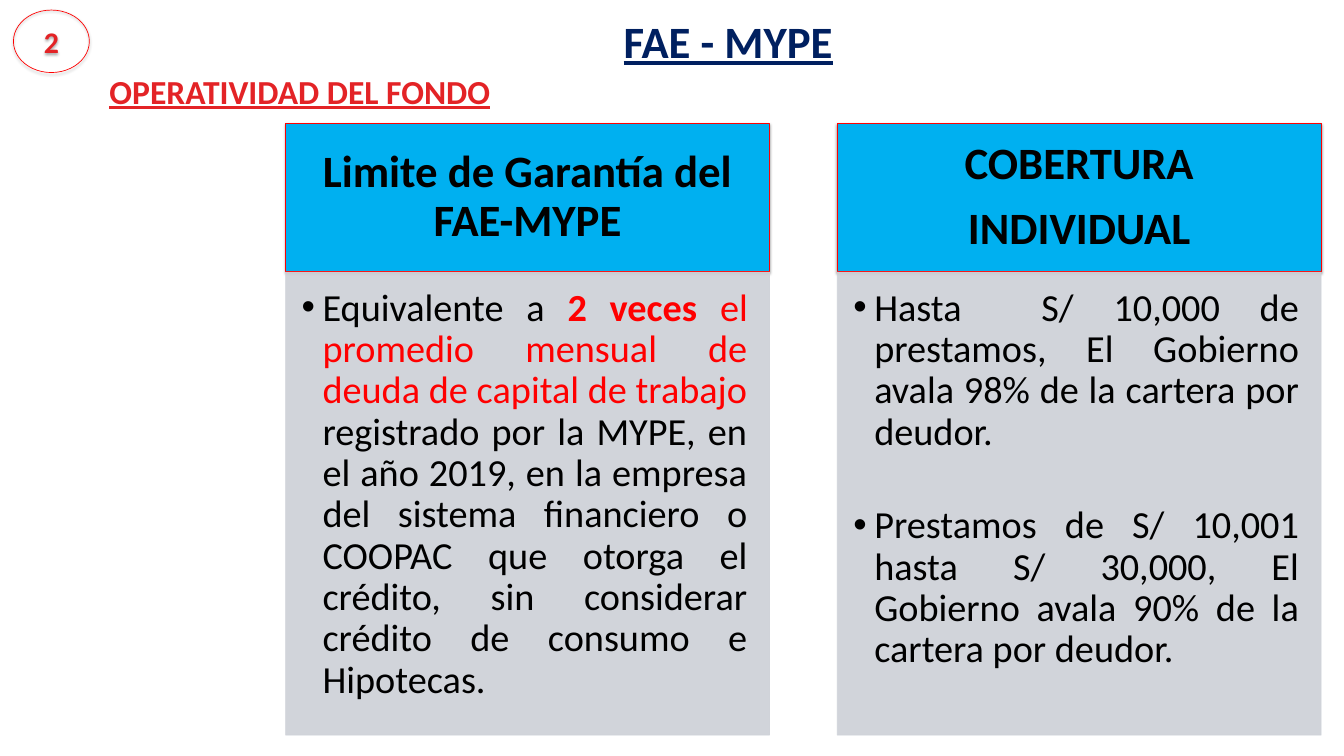
from lxml import etree
from pptx import Presentation
from pptx.dml.color import RGBColor
from pptx.enum.shapes import MSO_SHAPE
from pptx.enum.text import MSO_ANCHOR, MSO_AUTO_SIZE, PP_ALIGN
from pptx.oxml.ns import qn
from pptx.util import Inches, Pt

OVAL = MSO_SHAPE.OVAL
TOP, MIDDLE = MSO_ANCHOR.TOP, MSO_ANCHOR.MIDDLE
LEFT, CENTER, JUSTIFY = PP_ALIGN.LEFT, PP_ALIGN.CENTER, PP_ALIGN.JUSTIFY
NO_FIT = MSO_AUTO_SIZE.NONE
COMPARISON = 4

COLORS = {"navy": "002060", "crimson": "E32326", "red": "FF0000",
          "blue": "00B0F0", "gray": "CDD0D7", "black": "000000"}

COLUMNS = [
    (["Limite de Garantía del FAE-MYPE"],
     [[("Equivalente a ", "black", False),
       ("2 veces ", "red", True),
       ("el promedio mensual de deuda de capital de trabajo ", "red", False),
       ("registrado por la MYPE, en el año 2019, en la empresa del sistema "
        "financiero o COOPAC que otorga el crédito, sin considerar crédito "
        "de consumo e Hipotecas. ", "black", False)]]),
    (["COBERTURA", "INDIVIDUAL"],
     [[("Hasta  S/ 10,000 de prestamos, El Gobierno avala 98% de la cartera "
        "por deudor.", "black", False)],
      [("Prestamos de S/ 10,001 hasta S/ 30,000, El Gobierno avala 90% de la "
        "cartera por deudor.", "black", False)]]),
]


class Deck:
    """Holds the style and the current slide."""

    font = "Calibri"

    def __init__(self, prs):
        self.s = prs.slides.add_slide(prs.slide_layouts[COMPARISON])

    def color(self, name):
        return RGBColor.from_string(COLORS[name])

    def place(self, sp, box):
        sp.left, sp.top, sp.width, sp.height = (Inches(v) for v in box)

    def frame(self, sp, anchor, insets=(0.1, 0.05, 0.1, 0.05)):
        tf = sp.text_frame
        tf.word_wrap = True
        tf.auto_size = NO_FIT
        tf.vertical_anchor = anchor
        tf.margin_left, tf.margin_top, tf.margin_right, tf.margin_bottom = (
            Inches(v) for v in insets)
        return tf

    def add_text(self, tf, paragraphs, size, align, spacing=1.0, gap=0,
                 underline=False, bullet=False):
        for i, runs in enumerate(paragraphs):
            p = tf.add_paragraph() if i else tf.paragraphs[0]
            if bullet:
                self.bullet(p)
            p.alignment = align
            p.line_spacing = spacing
            p.space_before = Pt(gap if i else 0)
            p.space_after = Pt(0)
            for text, color, bold in runs:
                r = p.add_run()
                r.text = text
                r.font.name = self.font
                r.font.size = Pt(size)
                r.font.bold = bold
                r.font.underline = underline
                r.font.color.rgb = self.color(color)

    def bullet(self, p):
        pPr = p._p.get_or_add_pPr()
        pPr.set("marL", str(Inches(0.31)))
        pPr.set("indent", str(-Inches(0.31)))
        etree.SubElement(pPr, qn("a:buFont"), typeface="Arial")
        etree.SubElement(pPr, qn("a:buChar"), char="•")

    def outline(self, sp, color, width):
        sp.line.color.rgb = self.color(color)
        sp.line.width = Pt(width)

    def fill(self, sp, color):
        sp.fill.solid()
        sp.fill.fore_color.rgb = self.color(color)

    def shadow(self, sp, distance, alpha):
        sp.shadow.inherit = False
        effects = sp._element.spPr.find(qn("a:effectLst"))
        outer = etree.SubElement(effects, qn("a:outerShdw"), blurRad=str(Pt(3.1)),
                                 dist=str(Pt(distance)), dir="5400000", rotWithShape="0")
        rgb = etree.SubElement(outer, qn("a:srgbClr"), val=COLORS["black"])
        etree.SubElement(rgb, qn("a:alpha"), val=str(alpha * 1000))

    def translucent(self, sp, alpha):
        for rgb in sp._element.spPr.iter(qn("a:srgbClr")):
            etree.SubElement(rgb, qn("a:alpha"), val=str(alpha * 1000))

    def title(self, text, box):
        sp = self.s.shapes.title
        self.place(sp, box)
        self.add_text(self.frame(sp, TOP), [[(text, "navy", True)]], 48, CENTER,
                      underline=True)

    def subtitle(self, text, box):
        sp = self.s.shapes.add_textbox(*(Inches(v) for v in box))
        self.add_text(self.frame(sp, TOP), [[(text, "crimson", True)]], 36, LEFT,
                      underline=True)

    def badge(self, text, box):
        sp = self.s.shapes.add_shape(OVAL, *(Inches(v) for v in box))
        sp.fill.background()
        self.outline(sp, "red", 0.75)
        self.shadow(sp, 1.8, 35)
        self.add_text(self.frame(sp, MIDDLE), [[(text, "crimson", True)]], 32, CENTER)

    def header(self, idx, lines, box):
        sp = self.s.placeholders[idx]
        self.place(sp, box)
        self.fill(sp, "blue")
        self.outline(sp, "red", 1)
        self.shadow(sp, 1.6, 38)
        tf = self.frame(sp, MIDDLE, (0.37, 0.21, 0.37, 0.21))
        self.add_text(tf, [[(line, "black", True)] for line in lines], 48, CENTER,
                      spacing=0.9, gap=17)

    def body(self, idx, paragraphs, box):
        sp = self.s.placeholders[idx]
        self.place(sp, box)
        self.fill(sp, "gray")
        self.outline(sp, "gray", 0.75)
        self.translucent(sp, 90)
        tf = self.frame(sp, TOP, (0.24, 0.24, 0.32, 0.36))
        self.add_text(tf, paragraphs, 41, JUSTIFY, spacing=0.9, gap=56, bullet=True)


def main():
    prs = Presentation()
    prs.slide_width, prs.slide_height = Inches(20), Inches(11.25)
    deck = Deck(prs)
    deck.title("FAE - MYPE", (7.75, 0.15, 6.17, 0.91))
    deck.subtitle("OPERATIVIDAD DEL FONDO", (1.53, 1, 8.75, 0.71))
    deck.badge("2", (0.2, 0.15, 1.13, 0.93))
    for i, (lines, paragraphs) in enumerate(COLUMNS):
        left = 4.25 + 8.21 * i
        deck.header(1 + 2 * i, lines, (left, 1.84, 7.2, 2.2))
        deck.body(2 + 2 * i, paragraphs, (left, 4.05, 7.2, 6.89))
    prs.save("out.pptx")


if __name__ == "__main__":
    main()
